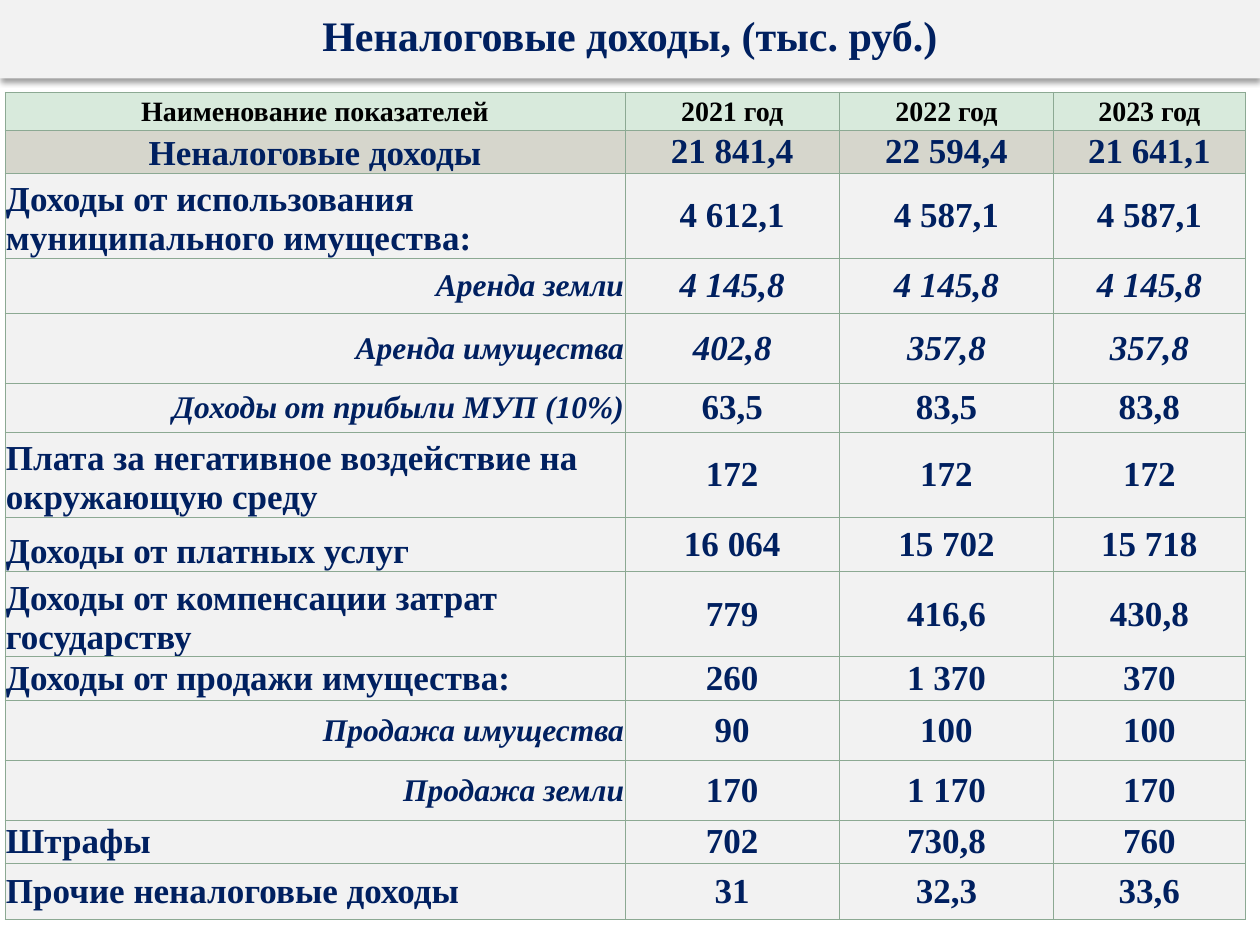
"""Build a slide with a table of non-tax budget revenues by year."""
from lxml.etree import SubElement
from pptx import Presentation
from pptx.dml.color import RGBColor
from pptx.enum.text import MSO_ANCHOR, PP_ALIGN
from pptx.oxml.ns import qn
from pptx.util import Cm, Pt

NAVY, PALE, BORDER = "002060", "F2F2F2", "8CA993"


def color(value):
    """Turn a hex string into a colour."""
    return RGBColor.from_string(value)


def write(paragraph, text, align, font_color, **font_format):
    """Put one formatted run into a paragraph."""
    paragraph.alignment = align
    run = paragraph.add_run()
    run.text = text
    run.font.color.rgb = color(font_color)
    for name, value in {"name": "Times New Roman", "bold": True, **font_format}.items():
        setattr(run.font, name, value)


presentation = Presentation()
presentation.slide_width, presentation.slide_height = Cm(25.4), Cm(19.05)
slide = presentation.slides.add_slide(presentation.slide_layouts[5])

title = slide.shapes.title
title_box = {"left": Cm(0), "top": Cm(0), "width": Cm(25.4), "height": Cm(1.58)}
for name, value in title_box.items():
    setattr(title, name, value)
title.fill.solid()
title.fill.fore_color.rgb = color(PALE)
title.line.fill.background()
effects = SubElement(title.element.spPr, qn("a:effectLst"))
shadow = SubElement(effects, qn("a:outerShdw"), blurRad=str(Pt(3.1)), dist=str(Pt(2)),
                    dir="5400000", algn="t", rotWithShape="0")
shadow_color = SubElement(shadow, qn("a:srgbClr"), val="000000")
SubElement(shadow_color, qn("a:alpha"), val="38000")
title_frame = title.text_frame
title_format = {"vertical_anchor": MSO_ANCHOR.MIDDLE, "margin_top": Cm(0.1),
                "margin_bottom": Cm(0.3), "word_wrap": True}
for name, value in title_format.items():
    setattr(title_frame, name, value)
write(title_frame.paragraphs[0], "Неналоговые доходы, (тыс. руб.)",
      PP_ALIGN.CENTER, NAVY, size=Pt(24))

label_styles = {
    "header": {"align": PP_ALIGN.CENTER, "anchor": MSO_ANCHOR.MIDDLE, "size": 16},
    "total": {"align": PP_ALIGN.CENTER, "anchor": MSO_ANCHOR.BOTTOM, "size": 20},
    "low": {"align": PP_ALIGN.LEFT, "anchor": MSO_ANCHOR.BOTTOM, "size": 20},
    "group": {"align": PP_ALIGN.LEFT, "anchor": MSO_ANCHOR.MIDDLE, "size": 20},
    "detail": {"align": PP_ALIGN.RIGHT, "anchor": MSO_ANCHOR.MIDDLE, "size": 18},
    "rent": {"align": PP_ALIGN.RIGHT, "anchor": MSO_ANCHOR.MIDDLE, "size": 18},
}
fills = {"header": "D8EADC", "total": "D6D6CC"}
rows = [
    ("header", 0.76, "Наименование показателей", "2021 год", "2022 год", "2023 год"),
    ("total", 0.87, "Неналоговые доходы", "21 841,4", "22 594,4", "21 641,1"),
    ("low", 1.71, "Доходы от использования муниципального имущества:",
     "4 612,1", "4 587,1", "4 587,1"),
    ("rent", 1.11, "Аренда земли", "4 145,8", "4 145,8", "4 145,8"),
    ("rent", 1.41, "Аренда имущества", "402,8", "357,8", "357,8"),
    ("detail", 0.99, "Доходы от прибыли МУП (10%)", "63,5", "83,5", "83,8"),
    ("low", 1.71, "Плата за негативное воздействие на окружающую среду",
     "172", "172", "172"),
    ("low", 1.09, "Доходы от платных услуг", "16 064", "15 702", "15 718"),
    ("low", 1.73, "Доходы от компенсации затрат государству", "779", "416,6", "430,8"),
    ("group", 0.87, "Доходы от продажи имущества:", "260", "1 370", "370"),
    ("detail", 1.21, "Продажа имущества", "90", "100", "100"),
    ("detail", 1.21, "Продажа земли", "170", "1 170", "170"),
    ("group", 0.87, "Штрафы", "702", "730,8", "760"),
    ("group", 1.13, "Прочие неналоговые доходы", "31", "32,3", "33,6"),
]
column_widths = [12.5, 4.32, 4.32, 3.86]
table = slide.shapes.add_table(
    len(rows), len(column_widths), Cm(0.1), Cm(1.86),
    Cm(sum(column_widths)), Cm(sum(row[1] for row in rows))).table
table.horz_banding = False
for column, width in zip(table.columns, column_widths):
    column.width = Cm(width)

for row_index, (kind, height, *texts) in enumerate(rows):
    table.rows[row_index].height = Cm(height)
    for column_index, text in enumerate(texts):
        cell = table.cell(row_index, column_index)
        is_label = column_index == 0
        style = label_styles[kind]
        cell_format = {
            "margin_left": Cm(0.02), "margin_right": Cm(0.02),
            "margin_top": Cm(0.02), "margin_bottom": Cm(0),
            "vertical_anchor": style["anchor"] if is_label else MSO_ANCHOR.MIDDLE,
        }
        for name, value in cell_format.items():
            setattr(cell, name, value)
        properties = cell._tc.get_or_add_tcPr()
        for side in ("lnL", "lnR", "lnT", "lnB"):
            border = SubElement(properties, qn(f"a:{side}"), w=str(Pt(0.5)))
            border_fill = SubElement(border, qn("a:solidFill"))
            SubElement(border_fill, qn("a:srgbClr"), val=BORDER)
        cell.fill.solid()
        cell.fill.fore_color.rgb = color(fills.get(kind, PALE))
        size = style["size"] if is_label or kind == "header" else 20
        write(cell.text_frame.paragraphs[0], text,
              style["align"] if is_label else PP_ALIGN.CENTER,
              "000000" if kind == "header" else NAVY, size=Pt(size),
              italic=kind == "rent" or (kind == "detail" and is_label))

presentation.save("out.pptx")
